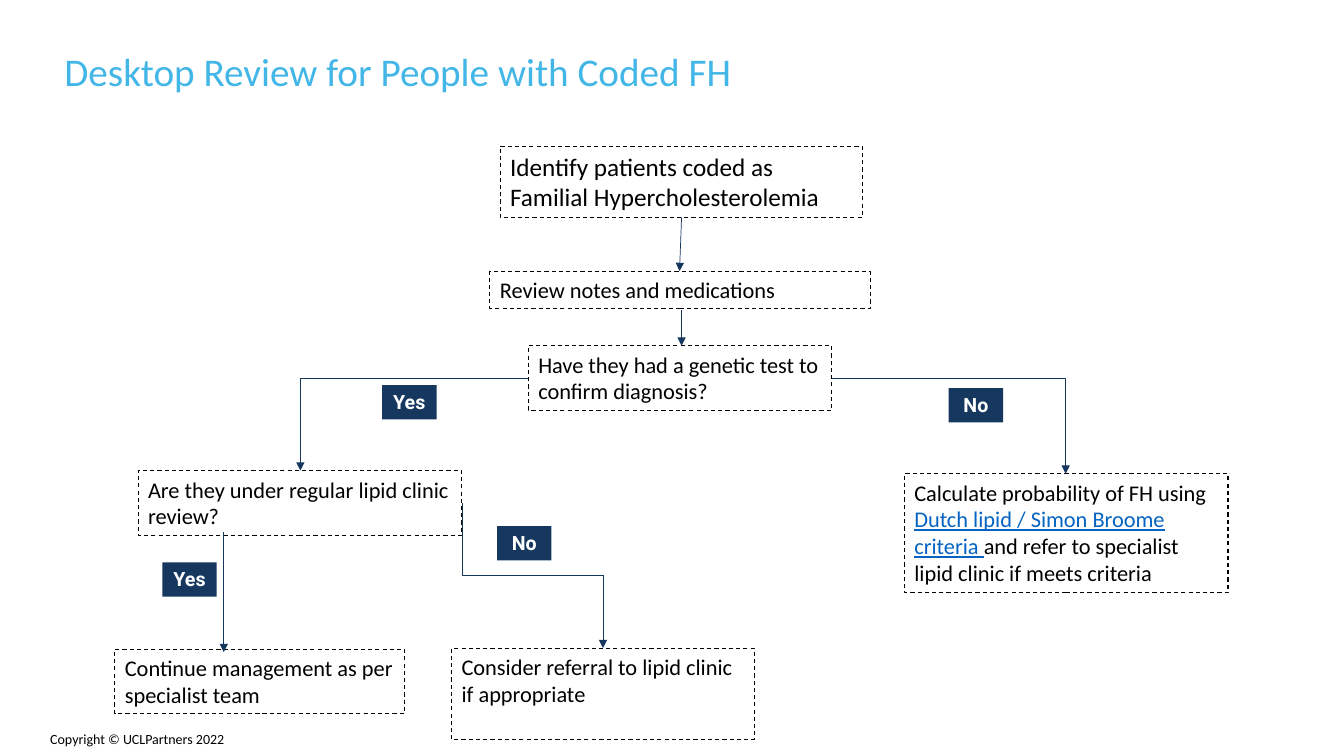
from lxml.etree import SubElement
from pptx import Presentation
from pptx.dml.color import RGBColor
from pptx.enum.dml import MSO_LINE
from pptx.enum.shapes import MSO_CONNECTOR
from pptx.enum.text import PP_ALIGN
from pptx.oxml.ns import qn
from pptx.util import Emu, Pt

SCALE = 9144
BLACK, WHITE, SKY, LINK = "000000", "FFFFFF", "42B6E6", "0563C1"
NAVY, INK = "16385E", "15375D"


def px(count):
    """Turn px into EMU."""
    return Emu(round(count * SCALE))


def paint(target, color):
    """Give a font, line or fill a solid colour."""
    if hasattr(target, "solid"):
        target.solid()
        target.fore_color.rgb = RGBColor.from_string(color)
    else:
        target.color.rgb = RGBColor.from_string(color)


def write(slide, box, runs, size, face="Calibri", bold=False, wrap=True):
    """Place a text box holding one paragraph of (text, colour) runs."""
    shape = slide.shapes.add_textbox(*map(px, box))
    frame = shape.text_frame
    frame.word_wrap = wrap
    for text, color in runs:
        run = frame.paragraphs[0].add_run()
        run.text = text
        run.font.name = face
        run.font.size = Pt(size)
        run.font.bold = bold
        run.font.underline = color == LINK
        paint(run.font, color)
    return shape


def step(slide, box, *runs, size=16):
    """Draw a dashed step of the flow."""
    shape = write(slide, box, runs, size)
    paint(shape.line, BLACK)
    shape.line.width = Pt(0.75)
    shape.line.dash_style = MSO_LINE.DASH


def label(slide, left, top, text):
    """Draw an answer label on a branch."""
    shape = write(slide, (left, top, 54, 34), [(text, WHITE)], 14, "Roboto", True)
    paint(shape.fill, NAVY)
    frame = shape.text_frame
    frame.margin_left = frame.margin_right = 0
    frame.paragraphs[0].alignment = PP_ALIGN.CENTER


def arrow(slide, start, end, kind="line"):
    """Join two points with an arrow: line, bentConnector2 or a turned bentConnector3."""
    turned = kind == "bentConnector3"
    if turned:
        midx, midy = (start[0] + end[0]) / 2, (start[1] + end[1]) / 2
        halfx, halfy = (end[0] - start[0]) / 2, (end[1] - start[1]) / 2
        start = midx + halfy, midy - halfx
        end = midx - halfy, midy + halfx
    style = MSO_CONNECTOR.STRAIGHT if kind == "line" else MSO_CONNECTOR.ELBOW
    link = slide.shapes.add_connector(style, *map(px, (*start, *end)))
    paint(link.line, INK)
    link.line.width = Pt(0.5)
    props = link._element.spPr
    props.find(qn("a:prstGeom")).set("prst", kind)
    if turned:
        props.find(qn("a:xfrm")).set("rot", str(270 * 60000))
    SubElement(props.find(qn("a:ln")), qn("a:tailEnd"), type="triangle")
    SubElement(props, qn("a:effectLst"))


def frame(slide, box):
    """Place the title and the copyright line."""
    left, top, width, height = box
    title = write(slide, (left + 54, top + 47, 1039, 60),
                  [("Desktop Review for People with Coded FH", SKY)], 28)
    title.text_frame.paragraphs[0].line_spacing = 0.9
    write(slide, (left + 40, top + height - 30, 196, 27),
          [("Copyright © UCLPartners 2022", BLACK)], 10, wrap=False)


def trunk(slide, box):
    """Draw the shared steps down to the genetic test."""
    left, top, width, height = box
    axis = left + width // 2
    step(slide, (left + 10, top, 359, 71),
         ("Identify patients coded as Familial Hypercholesterolemia", BLACK), size=18)
    step(slide, (left, top + 124, width, 37), ("Review notes and medications", BLACK))
    step(slide, (left + 38, top + 198, 301, 64),
         ("Have they had a genetic test to confirm diagnosis?", BLACK))
    arrow(slide, (axis + 2, top + 71), (axis, top + 124))
    arrow(slide, (axis + 2, top + 163), (axis + 2, top + 198))


def tested(slide, box):
    """Draw the branch for people with a genetic test."""
    left, top, width, height = box
    step(slide, (left + 23, top + 92, 321, 64),
         ("Are they under regular lipid clinic review?", BLACK))
    step(slide, (left, top + 269, 287, 64),
         ("Continue management as per specialist team", BLACK))
    step(slide, (left + 334, top + 268, 300, 91),
         ("Consider referral to lipid clinic if appropriate", BLACK))
    arrow(slide, (left + 410, top), (left + 184, top + 92), "bentConnector2")
    arrow(slide, (left + 108, top + 153), (left + 108, top + 272))
    arrow(slide, (left + 345, top + 124), (left + 484, top + 268), "bentConnector3")
    label(slide, left + 265, top + 7, "Yes")
    label(slide, left + 47, top + 183, "Yes")
    label(slide, left + 379, top + 147, "No")


def untested(slide, box):
    """Draw the branch for people without a genetic test."""
    left, top, width, height = box
    step(slide, (left + 72, top + 95, 321, 118),
         ("Calculate probability of FH using ", BLACK),
         ("Dutch lipid / Simon Broome criteria ", LINK),
         ("and refer to specialist lipid clinic if meets criteria", BLACK))
    arrow(slide, (left, top), (left + 232, top + 95), "bentConnector2")
    label(slide, left + 116, top + 10, "No")


def main():
    """Build and save the slide."""
    deck = Presentation()
    deck.slide_width, deck.slide_height = px(1333), px(750)
    slide = deck.slides.add_slide(deck.slide_layouts[6])
    frame(slide, (0, 0, 1333, 750))
    trunk(slide, (486, 145, 377, 262))
    tested(slide, (114, 375, 634, 359))
    untested(slide, (825, 375, 393, 213))
    deck.save("out.pptx")


if __name__ == "__main__":
    main()
